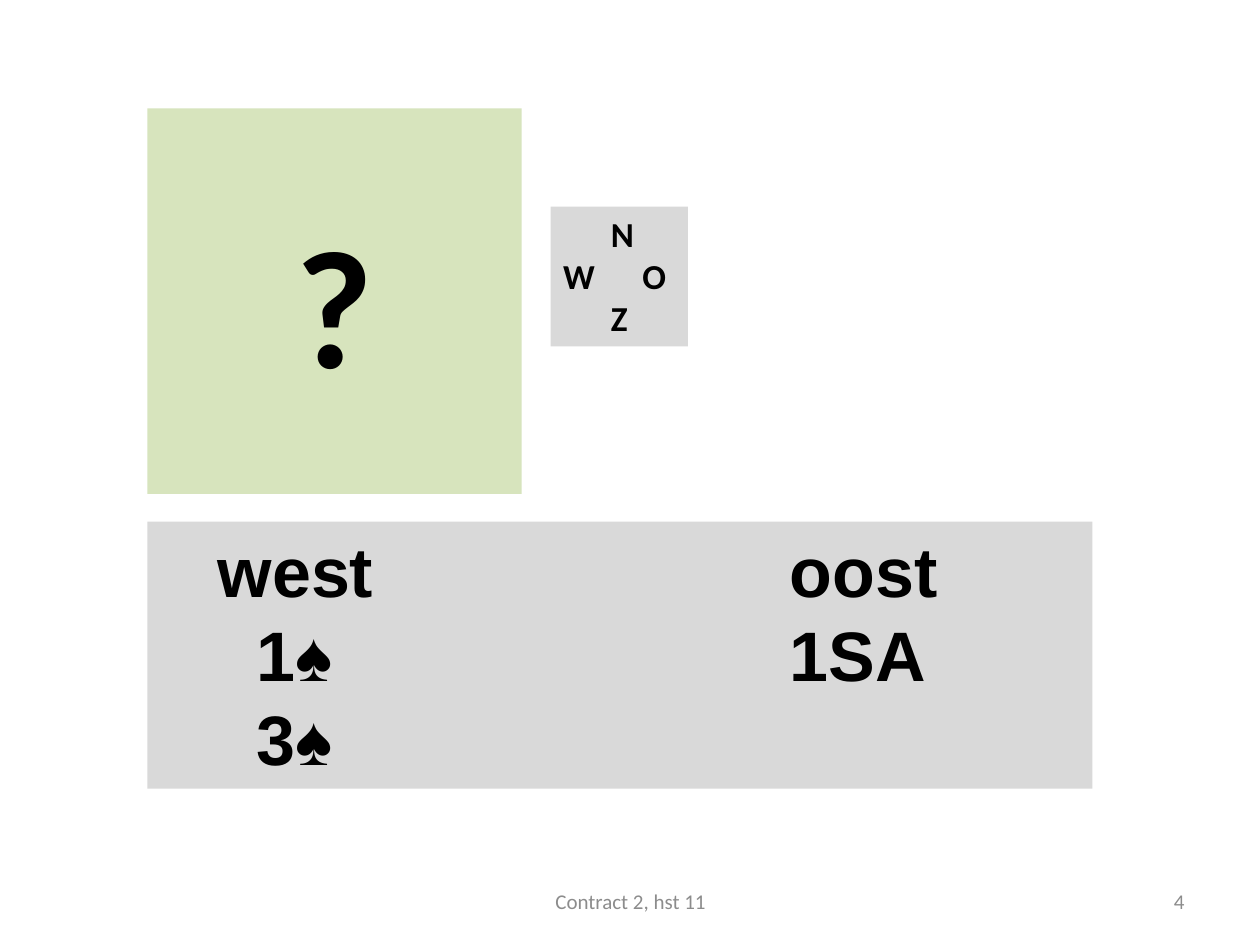
from lxml import etree
from pptx import Presentation
from pptx.dml.color import RGBColor
from pptx.enum.shapes import MSO_SHAPE
from pptx.enum.text import MSO_ANCHOR, PP_ALIGN
from pptx.oxml.ns import qn
from pptx.util import Inches, Pt

RECTANGLE = MSO_SHAPE.RECTANGLE
TOP, MIDDLE = MSO_ANCHOR.TOP, MSO_ANCHOR.MIDDLE
LEFT, CENTER, RIGHT = PP_ALIGN.LEFT, PP_ALIGN.CENTER, PP_ALIGN.RIGHT
COLORS = {"green": "D7E4BD", "grey": "D9D9D9", "text": "000000", "footer": "8C8C8C"}

presentation = Presentation()
presentation.slide_width, presentation.slide_height = Inches(10), Inches(7.5)
slide = presentation.slides.add_slide(presentation.slide_layouts[6])


def write_lines(shape, lines, anchor, alignment, color, font_format):
    """Each line is its text and the tab stops, in inches, that place its parts."""
    frame = shape.text_frame
    frame.word_wrap = True
    frame.vertical_anchor = anchor
    for index, (text, stops) in enumerate(lines):
        paragraph = frame.paragraphs[0] if index == 0 else frame.add_paragraph()
        paragraph.alignment = alignment
        run = paragraph.add_run()
        run.text = text
        run.font.color.rgb = RGBColor.from_string(COLORS[color])
        for name, value in font_format.items():
            setattr(run.font, name, value)
        if stops:
            tab_list = etree.SubElement(paragraph._p.get_or_add_pPr(), qn("a:tabLst"))
            for stop in stops:
                etree.SubElement(tab_list, qn("a:tab"), pos=str(Inches(stop)), algn="l")


# Panels: hand, compass and bidding
panel_left = 1.17
west_stop, bid_stop, east_stop = 0.46, 0.77, 5.0
panels = [
    ((panel_left, 0.86, 2.97, 3.06), "green", MIDDLE, CENTER, "Calibri", 96,
     [("?", [])]),
    ((4.37, 1.64, 1.09, 1.11), "grey", TOP, LEFT, "Calibri", 20,
     [("\tN", [0.38]), ("W\tO", [0.63]), ("\tZ", [0.38])]),
    ((panel_left, 4.14, 7.5, 2.12), "grey", TOP, LEFT, "Arial", 40,
     [("\twest\toost", [west_stop, east_stop]),
      ("\t1♠\t1SA", [bid_stop, east_stop]),
      ("\t3♠", [bid_stop])]),
]
for box, fill, anchor, alignment, font_name, size, lines in panels:
    panel = slide.shapes.add_shape(RECTANGLE, *map(Inches, box))
    panel.shadow.inherit = False
    panel.fill.solid()
    panel.fill.fore_color.rgb = RGBColor.from_string(COLORS[fill])
    panel.line.fill.background()
    write_lines(panel, lines, anchor, alignment, "text",
                {"name": font_name, "size": Pt(size), "bold": True})

# Footer and page number
for left, width, text, alignment in [
    (7.17, 2.33, "4", RIGHT),
    (3.42, 3.17, "Contract 2, hst 11", CENTER),
]:
    footer = slide.shapes.add_textbox(*map(Inches, (left, 6.95, width, 0.4)))
    write_lines(footer, [(text, [])], MIDDLE, alignment, "footer",
                {"name": "Calibri", "size": Pt(12)})

presentation.save("out.pptx")
